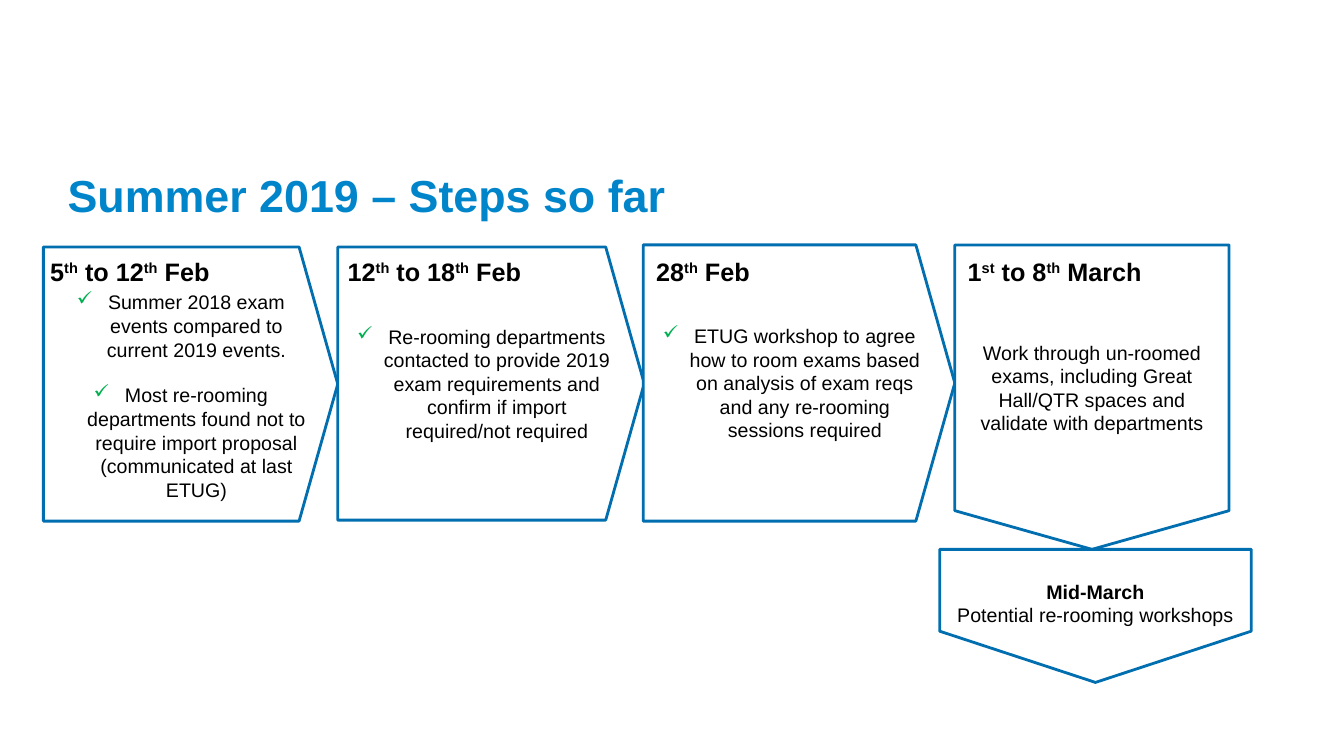
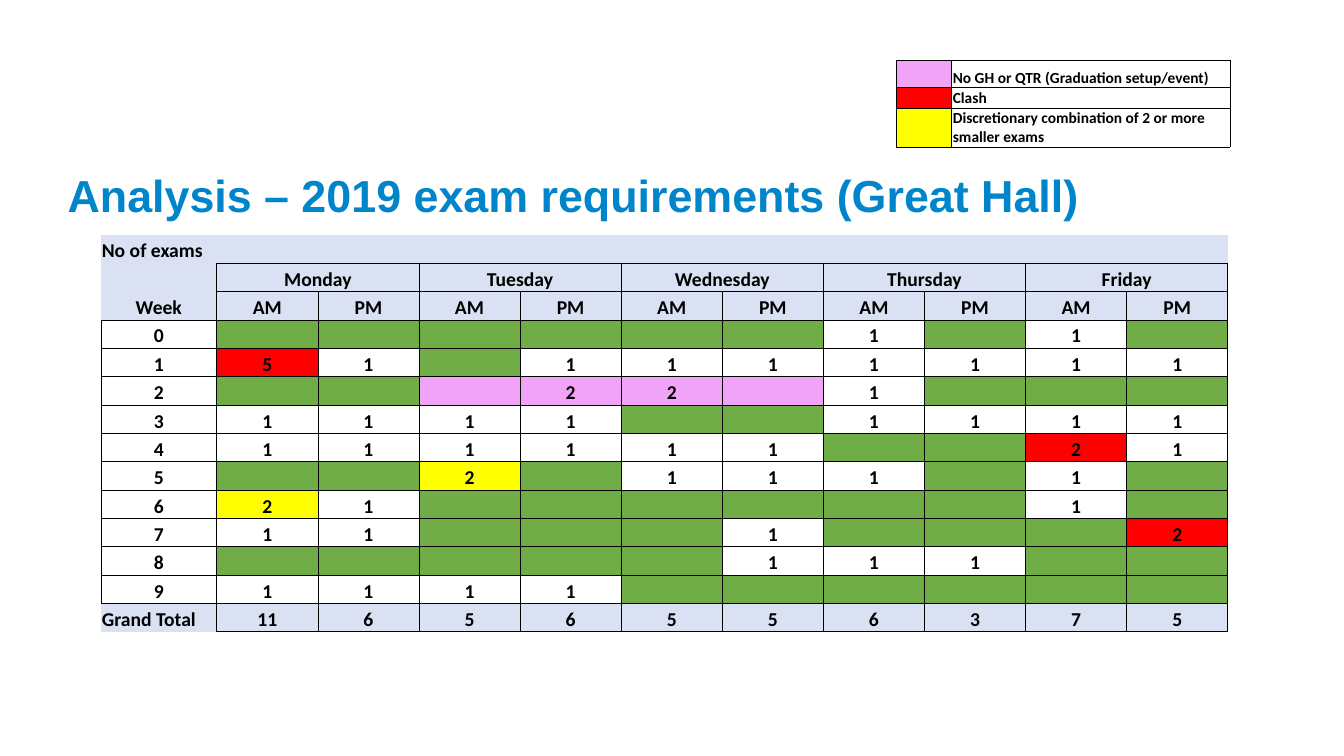
from lxml.etree import SubElement
from pptx import Presentation
from pptx.dml.color import RGBColor
from pptx.enum.shapes import MSO_SHAPE as SHAPE
from pptx.enum.text import MSO_ANCHOR as ANCHOR, MSO_AUTO_SIZE as AUTO_SIZE, PP_ALIGN as ALIGN
from pptx.oxml.ns import qn
from pptx.util import Inches, Pt

TITLE_BLUE = RGBColor(0x00, 0x85, 0xCA)
LINE_BLUE = RGBColor(0x00, 0x6E, 0xAF)
HEADER_BLUE = RGBColor(0xD9, 0xE1, 0xF2)
TICK_GREEN = RGBColor(0x00, 0xB0, 0x50)
FREE_GREEN = RGBColor(0x70, 0xAD, 0x47)
PINK = RGBColor(0xF1, 0xA3, 0xF7)
RED = RGBColor(0xFF, 0x00, 0x00)
YELLOW = RGBColor(0xFF, 0xFF, 0x00)
BLACK = RGBColor(0x00, 0x00, 0x00)
WHITE = RGBColor(0xFF, 0xFF, 0xFF)

TITLE_FONT = dict(name="Arial", size=Pt(32), bold=True)
DATE_FONT = dict(name="Arial", size=Pt(18), bold=True)
BODY_FONT = dict(name="Arial", size=Pt(14), bold=False)
STRONG_FONT = dict(BODY_FONT, bold=True)
GRID_FONT = dict(name="Calibri", size=Pt(14), bold=True)
LEGEND_FONT = dict(GRID_FONT, size=Pt(11))

# Date (^ marks superscript), left of its box, plate box, top inset, ticked steps
STEPS = [
    ("5^th^ to 12^th^ Feb", 0.4, (0.43, 2.45, 2.92, 2.72), 0.28,
     ["Summer 2018 exam events compared to current 2019 events.",
      "Most re-rooming departments found not to require import proposal "
      "(communicated at last ETUG)"]),
    ("12^th^ to 18^th^ Feb", 3.35, (3.35, 2.45, 3.04, 2.71), 0.05,
     ["Re-rooming departments contacted to provide 2019 exam requirements "
      "and confirm if import required/not required"]),
    ("28^th^ Feb", 6.41, (6.38, 2.43, 3.09, 2.74), 0.05,
     ["ETUG workshop to agree how to room exams based on analysis of exam "
      "reqs and any re-rooming sessions required"]),
]

DAYS = ["Monday", "Tuesday", "Wednesday", "Thursday", "Friday"]
# Exams per half day, then a fill key: g free, r clash, y combination, p no hall
FILLS = {"g": FREE_GREEN, "r": RED, "y": YELLOW, "p": PINK, "": None}
WEEKS = [
    "g g g g g g 1 g 1 g",
    "5r 1 g 1 1 1 1 1 1 1",
    "g g p 2p 2p p 1 g g g",
    "1 1 1 1 g g 1 1 1 1",
    "1 1 1 1 1 1 g g 2r 1",
    "g g 2y g 1 1 1 g 1 g",
    "2y 1 g g g g g g 1 g",
    "1 1 g g g 1 g g g 2r",
    "g g g g g 1 1 1 g g",
    "1 1 1 1 g g g g g g",
]
TOTALS = "11 6 5 6 5 5 6 3 7 5".split()
LEGEND = [
    (PINK, "No GH or QTR (Graduation setup/event)", 0.27),
    (RED, "Clash", 0.2),
    (YELLOW, "Discretionary combination of 2 or more smaller exams", 0.39),
]


def add_run(p, text, style, color=BLACK):
    r = p.add_run()
    r.text = text
    for name, value in style.items():
        setattr(r.font, name, value)
    r.font.color.rgb = color
    return r


def add_title_slide(prs, title):
    s = prs.slides.add_slide(prs.slide_layouts[5])
    sp = s.shapes.title
    sp.left, sp.top, sp.width, sp.height = map(Inches, (0.67, 1.63, 12, 0.56))
    tf = sp.text_frame
    tf.auto_size = AUTO_SIZE.NONE
    tf.vertical_anchor = ANCHOR.MIDDLE
    tf.margin_left = tf.margin_right = tf.margin_bottom = 0
    tf.margin_top = Inches(0.05)
    p = tf.paragraphs[0]
    p.alignment = ALIGN.LEFT
    add_run(p, title, TITLE_FONT, TITLE_BLUE)
    return s


def add_date(s, left, text):
    """Add a date heading; parts between ^ marks are superscript."""
    sp = s.shapes.add_textbox(Inches(left), Inches(2.49), Inches(2.3), Inches(0.4))
    sp.text_frame.word_wrap = True
    p = sp.text_frame.paragraphs[0]
    for i, part in enumerate(text.split("^")):
        r = add_run(p, part, DATE_FONT)
        if i % 2:
            r.font._element.set("baseline", "30000")


def set_tick(p):
    pPr = p._p.get_or_add_pPr()
    pPr.set("marL", str(Inches(0.31)))
    pPr.set("indent", str(-Inches(0.31)))
    SubElement(SubElement(pPr, qn("a:buClr")), qn("a:srgbClr"), val=str(TICK_GREEN))
    SubElement(pPr, qn("a:buChar"), char="✓")


def add_plate(s, box, lines, point=0.141, down=False, ticks=False, top_inset=0.05):
    """Add a pentagon arrow covering box, pointing right or down, with (text, style) lines."""
    left, top, width, height = box
    if down:
        left, top = left + (width - height) / 2, top + (height - width) / 2
        width, height = height, width
    sp = s.shapes.add_shape(SHAPE.PENTAGON, *map(Inches, (left, top, width, height)))
    sp.adjustments[0] = point
    sp.shadow.inherit = False
    sp.fill.solid()
    sp.fill.fore_color.rgb = WHITE
    sp.line.color.rgb = LINE_BLUE
    sp.line.width = Pt(2)
    tf = sp.text_frame
    tf.word_wrap = True
    tf.vertical_anchor = ANCHOR.MIDDLE
    tf.margin_top = Inches(top_inset)
    if down:
        sp.rotation = 90
        tf._txBody.bodyPr.set("vert", "vert270")
    for i, (text, style) in enumerate(lines):
        p = tf.add_paragraph() if i else tf.paragraphs[0]
        p.alignment = ALIGN.CENTER
        if ticks:
            set_tick(p)
            if i:
                p.space_before = Pt(16)
        add_run(p, text, style)


def set_borders(cell, sides):
    tcPr = cell._tc.get_or_add_tcPr()
    for side in "LRTB":
        ln = SubElement(tcPr, qn("a:ln" + side), w=str(Pt(0.5)))
        if side in sides:
            SubElement(SubElement(ln, qn("a:solidFill")), qn("a:srgbClr"), val=str(BLACK))
        else:
            SubElement(ln, qn("a:noFill"))


def fill_cell(cell, text, style, fill=None, align=ALIGN.CENTER, sides="LRTB"):
    set_borders(cell, sides)
    if fill is None:
        cell.fill.background()
    else:
        cell.fill.solid()
        cell.fill.fore_color.rgb = fill
    cell.margin_left = cell.margin_right = cell.margin_top = Inches(0.01)
    cell.margin_bottom = 0
    cell.vertical_anchor = ANCHOR.BOTTOM
    p = cell.text_frame.paragraphs[0]
    p.alignment = align
    if text:
        add_run(p, text, style)
    else:
        SubElement(p._p, qn("a:endParaRPr"), sz=str(int(style["size"].pt * 100)))


def add_table(s, left, top, widths, heights):
    size = (left, top, sum(widths), sum(heights))
    table = s.shapes.add_table(len(heights), len(widths), *map(Inches, size)).table
    table.first_row = table.horz_banding = False
    for col, width in zip(table.columns, widths):
        col.width = Inches(width)
    for row, height in zip(table.rows, heights):
        row.height = Inches(height)
    return table


def add_exam_grid(s):
    halves = 2 * len(DAYS)
    rows = [["No of exams"] + [""] * halves,
            [""] + [text for day in DAYS for text in (day, "")],
            ["Week"] + ["AM", "PM"] * len(DAYS)]
    rows += [[str(week)] + line.split() for week, line in enumerate(WEEKS)]
    rows.append(["Grand Total"] + TOTALS)
    last = len(rows) - 1
    table = add_table(s, 1, 2.33, [1.15] + [10.03 / halves] * halves,
                      [3.94 / len(rows)] * len(rows))
    first_column_sides = {0: "", 1: "R", 2: "RB", last: "TR"}
    for i, row in enumerate(rows):
        in_weeks = 3 <= i < last
        for j, text in enumerate(row):
            fill, sides, align = HEADER_BLUE, "LRTB", ALIGN.CENTER
            if in_weeks:
                number = text.rstrip("gryp")
                fill, text = FILLS[text[len(number):]], number
            if j == 0:
                sides = first_column_sides.get(i, sides)
                if i in (0, last):
                    align = ALIGN.LEFT
            elif i == 0:
                sides = "B"
            fill_cell(table.cell(i, j), text, GRID_FONT, fill, align, sides)
    for j in range(1, halves, 2):
        table.cell(1, j).merge(table.cell(1, j + 1))


def add_legend(s):
    table = add_table(s, 8.89, 0.6, [0.55, 2.76], [height for _, _, height in LEGEND])
    for i, (color, text, _) in enumerate(LEGEND):
        fill_cell(table.cell(i, 0), "", LEGEND_FONT, color)
        fill_cell(table.cell(i, 1), text, LEGEND_FONT, align=ALIGN.LEFT)


def build_steps(prs):
    s = add_title_slide(prs, "Summer 2019 – Steps so far")
    for date, left, box, top_inset, steps in STEPS:
        add_plate(s, box, [(step, BODY_FONT) for step in steps],
                  ticks=True, top_inset=top_inset)
        add_date(s, left, date)
    add_plate(s, (9.47, 2.43, 2.72, 3.02),
              [("Work through un-roomed exams, including Great Hall/QTR spaces "
                "and validate with departments", BODY_FONT)], down=True)
    add_date(s, 9.5, "1^st^ to 8^th^ March")
    add_plate(s, (9.32, 5.45, 3.09, 1.32),
              [("Mid-March", STRONG_FONT), ("Potential re-rooming workshops", BODY_FONT)],
              point=0.385, down=True)


def build_analysis(prs):
    s = add_title_slide(prs, "Analysis – 2019 exam requirements (Great Hall)")
    add_exam_grid(s)
    add_legend(s)


def main():
    prs = Presentation()
    prs.slide_width, prs.slide_height = Inches(13.33), Inches(7.5)
    build_steps(prs)
    build_analysis(prs)
    prs.save("out.pptx")


if __name__ == "__main__":
    main()
